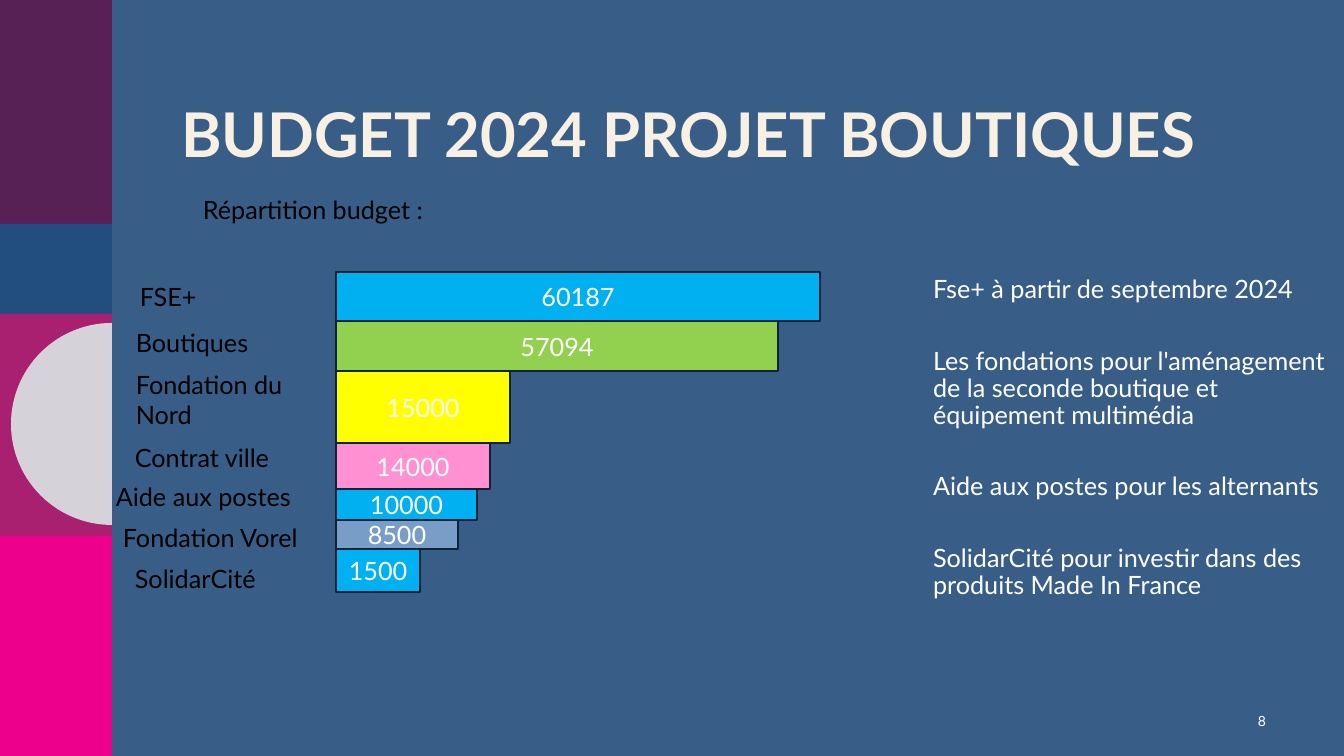
"""Build the 2024 budget slide: stacked funding bars with labels and notes."""
import math
from pptx import Presentation
from pptx import util as u
from pptx.dml.color import RGBColor
from pptx.enum import shapes, text
from pptx.oxml.ns import qn

EMU_PER_PX = 914400 / 100.8
BLACK, WHITE, CREAM, NAVY = "000000", "FFFFFF", "F8F0E3", "0F2238"
TITLE = "BUDGET 2024 PROJET BOUTIQUES"
SUBTITLE = "Répartition budget :"
NOTES = [
    "Fse+ à partir de septembre 2024",
    "Les fondations pour l'aménagement de la seconde boutique et équipement multimédia",
    "Aide aux postes pour les alternants",
    "SolidarCité pour investir dans des produits Made In France",
]
# label, label left, label top, value, bar width, bar height, bar colour
FUNDS = [
    ("FSE+", 130, 276, 60187, 484, 49, "00B0F0"),
    ("Boutiques", 126, 322, 57094, 442, 50, "92D050"),
    ("Fondation du Nord", 126, 364, 15000, 174, 72, "FFFF00"),
    ("Contrat ville", 125, 437, 14000, 154, 46, "FF91D2"),
    ("Aide aux postes", 106, 476, 10000, 141, 31, "00B0F0"),
    ("Fondation Vorel", 113, 517, 8500, 122, 29, "789EC7"),
    ("SolidarCité", 125, 558, 1500, 84, 43, "00B0F0"),
]
BANDS = [(0, 224, "582156"), (224, 90, "224E7F"), (314, 222, "AA2070"), (536, 220, "EC008C")]
BAND_WIDTH, BAR_LEFT, BAR_TOP, LABEL_WIDTH = 112, 336, 272, 212
DISC_Y, DISC_RADIUS = 424, 101


def px(*lengths):
    return [u.Emu(round(n * EMU_PER_PX)) for n in lengths]


def rgb(colour):
    return RGBColor.from_string(colour)


def paint(sp, fill, line=None):
    sp.shadow.inherit = False
    sp.fill.solid()
    sp.fill.fore_color.rgb = rgb(fill)
    if line:
        sp.line.color.rgb = rgb(line)
        sp.line.width = u.Pt(1)
    else:
        sp.line.fill.background()
    return sp


def write(sp, *lines, size=18, colour=BLACK, bold=False, align="LEFT", anchor="TOP", spacing=1.0, after=0):
    tf = sp.text_frame
    tf.word_wrap = True
    tf.auto_size = text.MSO_AUTO_SIZE.NONE
    tf.vertical_anchor = getattr(text.MSO_ANCHOR, anchor)
    for i, line in enumerate(lines):
        p = tf.paragraphs[0] if i == 0 else tf.add_paragraph()
        p.alignment = getattr(text.PP_ALIGN, align)
        p.line_spacing = spacing
        p.space_before, p.space_after = u.Pt(0), u.Pt(after)
        r = p.add_run()
        r.text = line
        r.font.name, r.font.size, r.font.bold = "Lato", u.Pt(size), bold
        r.font.color.rgb = rgb(colour)


def place(sp, *box):
    sp.left, sp.top, sp.width, sp.height = px(*box)
    return sp


def remove_bullets(sp):
    for p in sp.text_frame.paragraphs:
        pPr = p._p.get_or_add_pPr()
        pPr.set("marL", "0")
        pPr.set("indent", "0")
        pPr.append(pPr.makeelement(qn("a:buNone"), {}))


def add_rect(s, *box):
    return s.shapes.add_shape(shapes.MSO_SHAPE.RECTANGLE, *px(*box))


def add_side_band(s):
    for top, height, colour in BANDS:
        paint(add_rect(s, 0, top, BAND_WIDTH, height), colour)
    angles = [math.radians(a) for a in range(90, 271, 3)]
    arc = [(BAND_WIDTH + DISC_RADIUS * math.cos(a), DISC_Y + DISC_RADIUS * math.sin(a)) for a in angles]
    outline = s.shapes.build_freeform(*px(*arc[0]), scale=1.0)
    outline.add_line_segments([px(*point) for point in arc[1:]], close=True)
    paint(outline.convert_to_shape(), "D5D2DA")


def add_funds(s):
    top = BAR_TOP
    for label, label_left, label_top, value, width, height, colour in FUNDS:
        bar = paint(add_rect(s, BAR_LEFT, top, width, height), colour, NAVY)
        write(bar, str(value), colour=WHITE, align="CENTER", anchor="MIDDLE")
        write(s.shapes.add_textbox(*px(label_left, label_top, LABEL_WIDTH, 41)), label)
        top += height


def main():
    prs = Presentation()
    prs.slide_width, prs.slide_height = px(1344, 756)
    s = prs.slides.add_slide(prs.slide_layouts[1])
    s.background.fill.solid()
    s.background.fill.fore_color.rgb = rgb("385E88")
    add_side_band(s)
    title, body = s.placeholders
    write(place(title, 171, 99, 1088, 150), TITLE, size=44, colour=CREAM, bold=True, spacing=0.9)
    write(s.shapes.add_textbox(*px(193, 189, 264, 102)), SUBTITLE)
    add_funds(s)
    write(place(body, 923, 272, 419, 415), *NOTES, colour=WHITE, spacing=0.9, after=31.5)
    remove_bullets(body)
    number = s.shapes.add_textbox(*px(1226, 701, 50, 40))
    write(number, "8", size=10, colour=WHITE, align="RIGHT", anchor="MIDDLE")
    prs.save("out.pptx")


if __name__ == "__main__":
    main()
